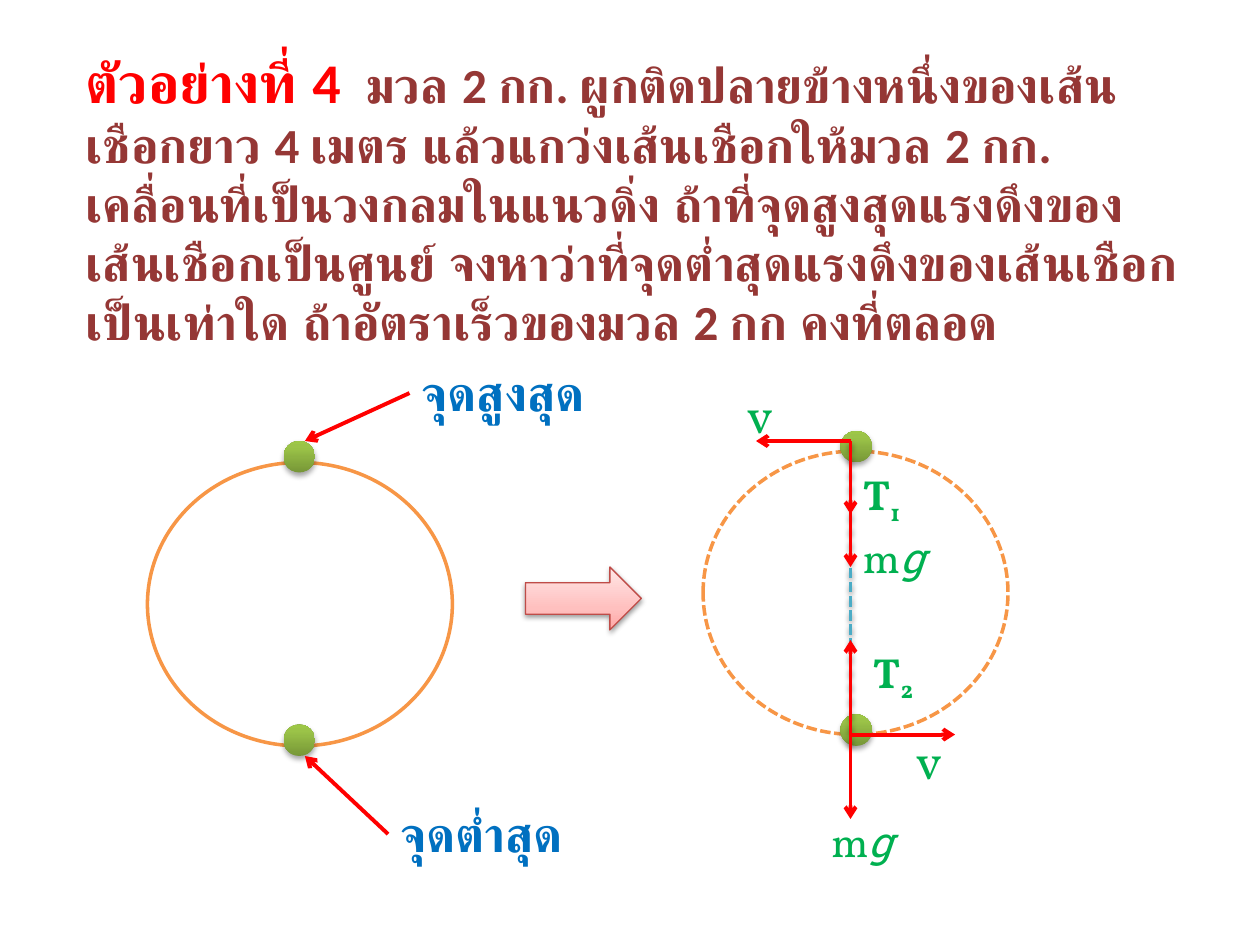
from dataclasses import dataclass

import pptx
import pptx.dml.color
import pptx.enum.dml
import pptx.enum.lang
import pptx.enum.shapes
import pptx.enum.text
import pptx.oxml
import pptx.oxml.ns
import pptx.util
from pptx.util import Inches

COLOURS = {
    "heading": "FF0000", "problem": "953735", "point": "0070C0",
    "force": "00B050", "vector": "FF0000", "orbit": "F79646",
    "white": "FFFFFF", "diameter": "4BACC6", "arrow_edge": "BF4C48",
}
BALL_STOPS = ((0, "779737"), (80, "9BC348"), (100, "9DC746"))
ARROW_STOPS = ((0, "FFA6A5"), (35, "FFC0BF"), (100, "FFE7E7"))
NAMESPACE = pptx.oxml.ns.nsdecls("a")
SHAPES = pptx.enum.shapes.MSO_SHAPE
DASH = pptx.enum.dml.MSO_LINE.SQUARE_DOT  # sysDash
BALL_SIZE = 0.25


@dataclass
class Span:
    text: str
    size: int
    colour: str
    font: str = "Calibri"
    bold: bool = False
    italic: bool = False
    subscript: bool = False


@dataclass
class Label:
    left: float
    top: float
    width: float
    height: float
    spans: list[Span]


@dataclass
class Vector:
    start: tuple[float, float]
    end: tuple[float, float]


def rgb(name: str) -> pptx.dml.color.RGBColor:
    return pptx.dml.color.RGBColor.from_string(COLOURS[name])


def add_label(page, label: Label) -> None:
    box = page.shapes.add_textbox(
        *map(Inches, (label.left, label.top, label.width, label.height)))
    frame = box.text_frame
    frame.word_wrap = True
    frame.auto_size = pptx.enum.text.MSO_AUTO_SIZE.SHAPE_TO_FIT_TEXT
    para = frame.paragraphs[0]
    for span in label.spans:
        run = para.add_run()
        run.text = span.text
        font = run.font
        font.name, font.size = span.font, pptx.util.Pt(span.size)
        font.bold, font.italic = span.bold, span.italic
        font.color.rgb = rgb(span.colour)
        if span.font == "Calibri":
            font.language_id = pptx.enum.lang.MSO_LANGUAGE_ID.THAI
        if span.subscript:
            run._r.get_or_add_rPr().set("baseline", "-25000")


def set_effects(shape, alpha: int = 0, distance: float = 0) -> None:
    """Give the shape a soft shadow below it, or none when alpha is 0."""
    shadow = ""
    if alpha:
        shadow = (
            f'<a:outerShdw blurRad="{pptx.util.Pt(3.1)}" dist="{pptx.util.Pt(distance)}" '
            f'dir="5400000" rotWithShape="0"><a:srgbClr val="000000">'
            f'<a:alpha val="{alpha * 1000}"/></a:srgbClr></a:outerShdw>')
    shape._element.spPr.append(
        pptx.oxml.parse_xml(f"<a:effectLst {NAMESPACE}>{shadow}</a:effectLst>"))


def set_gradient(shape, stops: tuple) -> None:
    marks = "".join(
        f'<a:gs pos="{place * 1000}"><a:srgbClr val="{colour}"/></a:gs>'
        for place, colour in stops)
    shape.fill.background()
    properties = shape._element.spPr
    properties.replace(
        properties.find(pptx.oxml.ns.qn("a:noFill")),
        pptx.oxml.parse_xml(
            f'<a:gradFill {NAMESPACE} rotWithShape="1"><a:gsLst>{marks}</a:gsLst>'
            f'<a:lin ang="16200000" scaled="0"/></a:gradFill>'))


def add_orbit(page, left: float, top: float, dashed: bool) -> None:
    orbit = page.shapes.add_shape(
        SHAPES.OVAL, *map(Inches, (left, top, 2.42, 2.25)))
    orbit.shadow.inherit = False
    orbit.fill.solid()
    orbit.fill.fore_color.rgb = rgb("white")
    orbit.line.color.rgb = rgb("orbit")
    orbit.line.width = pptx.util.Pt(2)
    if dashed:
        orbit.line.dash_style = DASH


def add_ball(page, left: float, top: float) -> None:
    ball = page.shapes.add_shape(
        SHAPES.OVAL, *map(Inches, (left, top, BALL_SIZE, BALL_SIZE)))
    set_gradient(ball, BALL_STOPS)
    ball.line.fill.background()
    set_effects(ball, 35, 1.8)


def add_block_arrow(page) -> None:
    arrow = page.shapes.add_shape(
        SHAPES.RIGHT_ARROW, *map(Inches, (4.17, 4.5, 0.92, 0.5)))
    set_gradient(arrow, ARROW_STOPS)
    arrow.line.color.rgb = rgb("arrow_edge")
    arrow.line.width = pptx.util.Pt(0.75)
    set_effects(arrow, 38, 1.6)


def add_line(page, vector: Vector, colour: str, width: float):
    line = page.shapes.add_connector(
        pptx.enum.shapes.MSO_CONNECTOR.STRAIGHT,
        *map(Inches, vector.start + vector.end))
    line.line.color.rgb = rgb(colour)
    line.line.width = pptx.util.Pt(width)
    return line


def add_vector(page, vector: Vector) -> None:
    line = add_line(page, vector, "vector", 2.25)
    line.line._get_or_add_ln().append(
        pptx.oxml.parse_xml(f'<a:tailEnd {NAMESPACE} type="arrow"/>'))
    set_effects(line)


def force(text: str, size: int = 24, **style) -> Span:
    return Span(text, size, "force", "Vollkorn", **style)


def tension(number: str) -> list[Span]:
    return [force("T", bold=True), force(number, bold=True, subscript=True)]


def weight() -> list[Span]:
    return [force("m"), Span("g", 24, "force", "Roboto Slab", italic=True)]


PROBLEM = Label(0.58, 0.33, 8.92, 2.05, [
    Span("ตัวอย่างที่ 4  ", 32, "heading", bold=True),
    Span("มวล 2 กก. ผูกติดปลายข้างหนึ่งของเส้นเชือกยาว 4 เมตร "
         "แล้วแกว่งเส้นเชือกให้มวล 2 กก. เคลื่อนที่เป็นวงกลมในแนวดิ่ง "
         "ถ้าที่จุดสูงสุดแรงดึงของเส้นเชือกเป็นศูนย์ "
         "จงหาว่าที่จุดต่ำสุดแรงดึงของเส้นเชือกเป็นเท่าใด "
         "ถ้าอัตราเร็วของมวล 2 กก คงที่ตลอด", 28, "problem", bold=True),
])
POINT_LABELS = [
    Label(3.08, 6.33, 2, 0.57, [Span("จุดต่ำสุด", 28, "point", bold=True)]),
    Label(3.25, 2.83, 2, 0.57, [Span("จุดสูงสุด", 28, "point", bold=True)]),
]
FORCE_LABELS = [
    Label(5.83, 3, 0.72, 0.57, [force("v", 28)]),
    Label(7.17, 5.75, 0.72, 0.57, [force("v", 28)]),
    Label(6.75, 3.67, 0.72, 0.5, tension("1")),
    Label(6.83, 5.08, 0.72, 0.5, tension("2")),
    Label(6.5, 6.42, 0.92, 0.5, weight()),
    Label(6.75, 4.17, 0.92, 0.5, weight()),
]
TOP, BOTTOM = (6.75, 3.5), (6.75, 5.83)
FORCES = [
    Vector(BOTTOM, (7.58, 5.83)), Vector(BOTTOM, (6.75, 5.08)),
    Vector(TOP, (6.75, 4.08)), Vector((6.75, 3.83), (6.75, 4.5)),
    Vector(TOP, (6, 3.5)), Vector(BOTTOM, (6.75, 6.5)),
]
POINTERS = [Vector((3.25, 3.12), (2.42, 3.5)), Vector((3.08, 6.62), (2.42, 6))]


def main() -> None:
    deck = pptx.Presentation()
    deck.slide_width, deck.slide_height = Inches(10), Inches(7.5)
    page = deck.slides.add_slide(deck.slide_layouts[6])

    # Problem statement and point names
    for label in [PROBLEM, *POINT_LABELS]:
        add_label(page, label)

    # Orbits with a ball at the top and bottom of each
    add_orbit(page, 1.17, 3.67, dashed=False)
    add_orbit(page, 5.58, 3.58, dashed=True)
    for left, top in ((2.25, 3.5), (6.67, 3.42)):
        for drop in (0, 2.25):
            add_ball(page, left, top + drop)
    add_block_arrow(page)

    # Diameter, forces and pointers
    diameter = add_line(page, Vector(TOP, (6.75, 5.92)), "diameter", 2)
    diameter.line.dash_style = DASH
    set_effects(diameter, 38, 1.6)
    for vector in FORCES:
        add_vector(page, vector)
    for label in FORCE_LABELS:
        add_label(page, label)
    for vector in POINTERS:
        add_vector(page, vector)

    deck.save("out.pptx")


if __name__ == "__main__":
    main()
